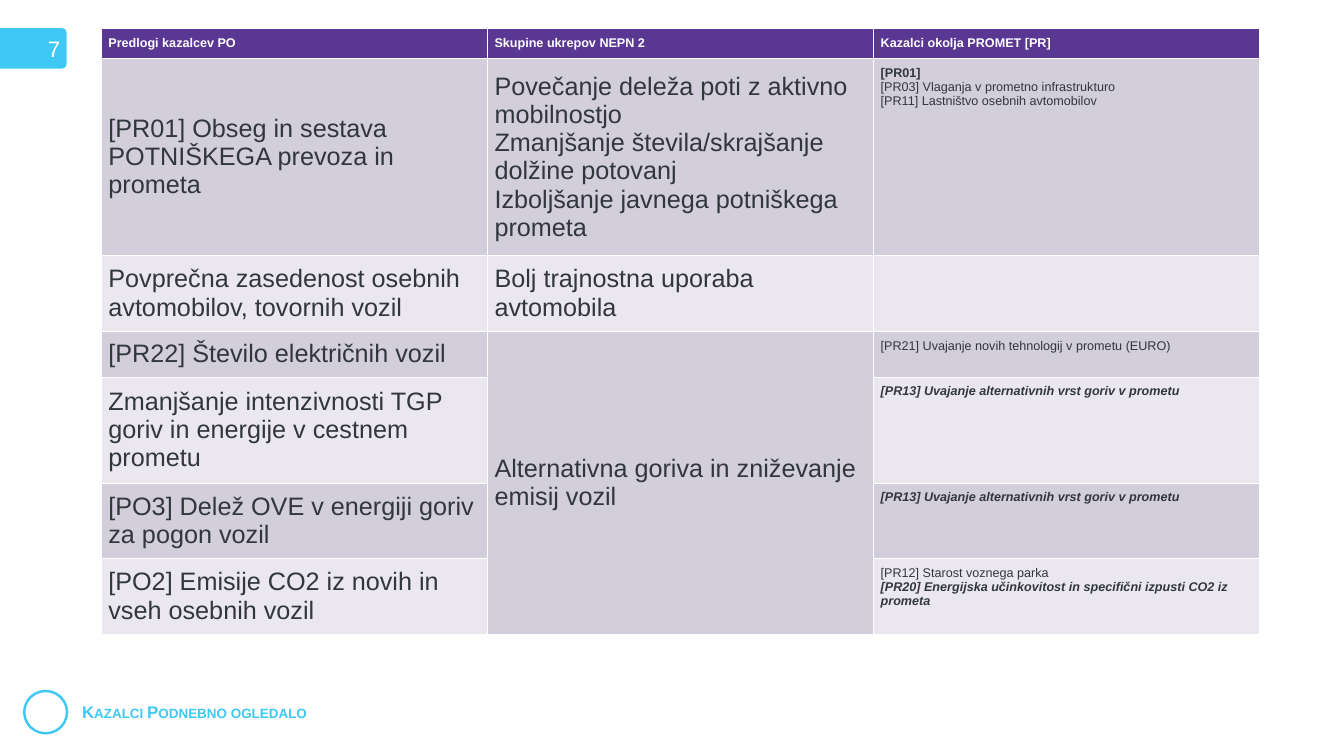
from pptx import Presentation
from pptx.dml.color import RGBColor
from pptx.enum.shapes import MSO_SHAPE
from pptx.enum.text import MSO_ANCHOR, PP_ALIGN
from pptx.oxml.ns import qn
from pptx.util import Inches, Pt
from lxml import etree

BLANK = 6
ELLIPSE, ROUNDED = MSO_SHAPE.OVAL, MSO_SHAPE.ROUNDED_RECTANGLE
TOP, MIDDLE = MSO_ANCHOR.TOP, MSO_ANCHOR.MIDDLE
RIGHT = PP_ALIGN.RIGHT

FONT = "Arial"
CYAN, PURPLE, DARK, WHITE = "40C8F4", "5A3793", "31373B", "FFFFFF"
BANDS = ["D2CEDC", "EAE8EE"]
PLAIN, BOLD, STRONG = (False, False), (True, False), (True, True)

HEADER = ["Predlogi kazalcev PO", "Skupine ukrepov NEPN 2", "Kazalci okolja PROMET [PR]"]
FUEL = ("[PR13] Uvajanje alternativnih vrst goriv v prometu", STRONG)
ROWS = [
    ("[PR01] Obseg in sestava POTNIŠKEGA prevoza in prometa",
     ["Povečanje deleža poti z aktivno mobilnostjo",
      "Zmanjšanje števila/skrajšanje dolžine potovanj",
      "Izboljšanje javnega potniškega prometa"],
     [("[PR01]", BOLD),
      ("[PR03] Vlaganja v prometno infrastrukturo", PLAIN),
      ("[PR11] Lastništvo osebnih avtomobilov", PLAIN)]),
    ("Povprečna zasedenost osebnih avtomobilov, tovornih vozil",
     ["Bolj trajnostna uporaba avtomobila"], []),
    ("[PR22] Število električnih vozil",
     ["Alternativna goriva in zniževanje emisij vozil"],
     [("[PR21] Uvajanje novih tehnologij v prometu (EURO)", PLAIN)]),
    ("Zmanjšanje intenzivnosti TGP goriv in energije v cestnem prometu", [], [FUEL]),
    ("[PO3] Delež OVE v energiji goriv za pogon vozil", [], [FUEL]),
    ("[PO2] Emisije CO2 iz novih in vseh osebnih vozil", [],
     [("[PR12] Starost voznega parka", PLAIN),
      ("[PR20] Energijska učinkovitost in specifični izpusti CO2 iz prometa", STRONG)]),
]
ROW_HEIGHTS = [0.6, 3.91, 1.49, 0.91, 2.1, 1.49, 1.5]
MERGE_FIRST, MERGE_LAST = 3, 6
COL_WIDTH, PADDING = 7.66, 0.15


def rgb(color):
    return RGBColor.from_string(color)


def inches(*values):
    return [Inches(v) for v in values]


def write(tf, lines, size, color):
    for i, (text, (bold, italic)) in enumerate(lines):
        p = tf.paragraphs[0] if i == 0 else tf.add_paragraph()
        p.add_run().text = text
        font = p.font
        font.name, font.size, font.bold, font.italic = FONT, Pt(size), bold, italic
        font.color.rgb = rgb(color)


def add_border(cell, side, width):
    tc_pr = cell._tc.get_or_add_tcPr()
    ln = etree.SubElement(tc_pr, qn(f"a:ln{side}"), w=str(Pt(width)))
    fill = etree.SubElement(ln, qn("a:solidFill"))
    etree.SubElement(fill, qn("a:srgbClr"), val=WHITE)


def style_cell(cell, lines, size, color, fill, anchor, bottom=1):
    for side, width in zip("LRTB", (1, 1, 1, bottom)):
        add_border(cell, side, width)
    cell.fill.solid()
    cell.fill.fore_color.rgb = rgb(fill)
    cell.margin_left = cell.margin_right = Inches(PADDING)
    cell.margin_top = cell.margin_bottom = Inches(PADDING)
    cell.vertical_anchor = anchor
    write(cell.text_frame, lines, size, color)


def plain(texts):
    return [(text, PLAIN) for text in texts]


def add_indicator_table(s):
    size = inches(COL_WIDTH * len(HEADER), sum(ROW_HEIGHTS))
    table = s.shapes.add_table(len(ROW_HEIGHTS), len(HEADER), *inches(2, 0.56), *size).table
    for col in table.columns:
        col.width = Inches(COL_WIDTH)
    for row, height in zip(table.rows, ROW_HEIGHTS):
        row.height = Inches(height)
    table.cell(MERGE_FIRST, 1).merge(table.cell(MERGE_LAST, 1))
    for c, text in enumerate(HEADER):
        style_cell(table.cell(0, c), [(text, BOLD)], 18, WHITE, PURPLE, TOP, 3)
    for r, (proposal, measures, indicators) in enumerate(ROWS, 1):
        band = BANDS[(r - 1) % 2]
        style_cell(table.cell(r, 0), plain([proposal]), 36, DARK, band, MIDDLE)
        style_cell(table.cell(r, 1), plain(measures), 36, DARK, band, MIDDLE)
        style_cell(table.cell(r, 2), indicators, 18, DARK, band, TOP)


def add_footer(s):
    tf = s.shapes.add_textbox(*inches(1.53, 13.88, 5.74, 0.5)).text_frame
    tf.word_wrap = True
    write(tf, [("Kazalci Podnebno ogledalo", BOLD)], 24, CYAN)
    tf.paragraphs[0].runs[0]._r.get_or_add_rPr().set("cap", "small")
    ring = s.shapes.add_shape(ELLIPSE, *inches(0.48, 13.71, 0.85, 0.84))
    ring.shadow.inherit = False
    ring.fill.background()
    ring.line.color.rgb = rgb(CYAN)
    ring.line.width = Pt(3.5)


def add_page_number(s):
    tab = s.shapes.add_shape(ROUNDED, *inches(-0.51, 0.56, 1.83, 0.8))
    tab.adjustments[0] = 0.11
    tab.shadow.inherit = False
    tab.fill.solid()
    tab.fill.fore_color.rgb = rgb(CYAN)
    tab.line.fill.background()
    tf = tab.text_frame
    tf.vertical_anchor = MIDDLE
    write(tf, plain(["7"]), 32, WHITE)
    tf.paragraphs[0].alignment = RIGHT


def main():
    prs = Presentation()
    prs.slide_width, prs.slide_height = inches(26.66, 15)
    s = prs.slides.add_slide(prs.slide_layouts[BLANK])
    add_footer(s)
    add_indicator_table(s)
    add_page_number(s)
    prs.save("out.pptx")


if __name__ == "__main__":
    main()
